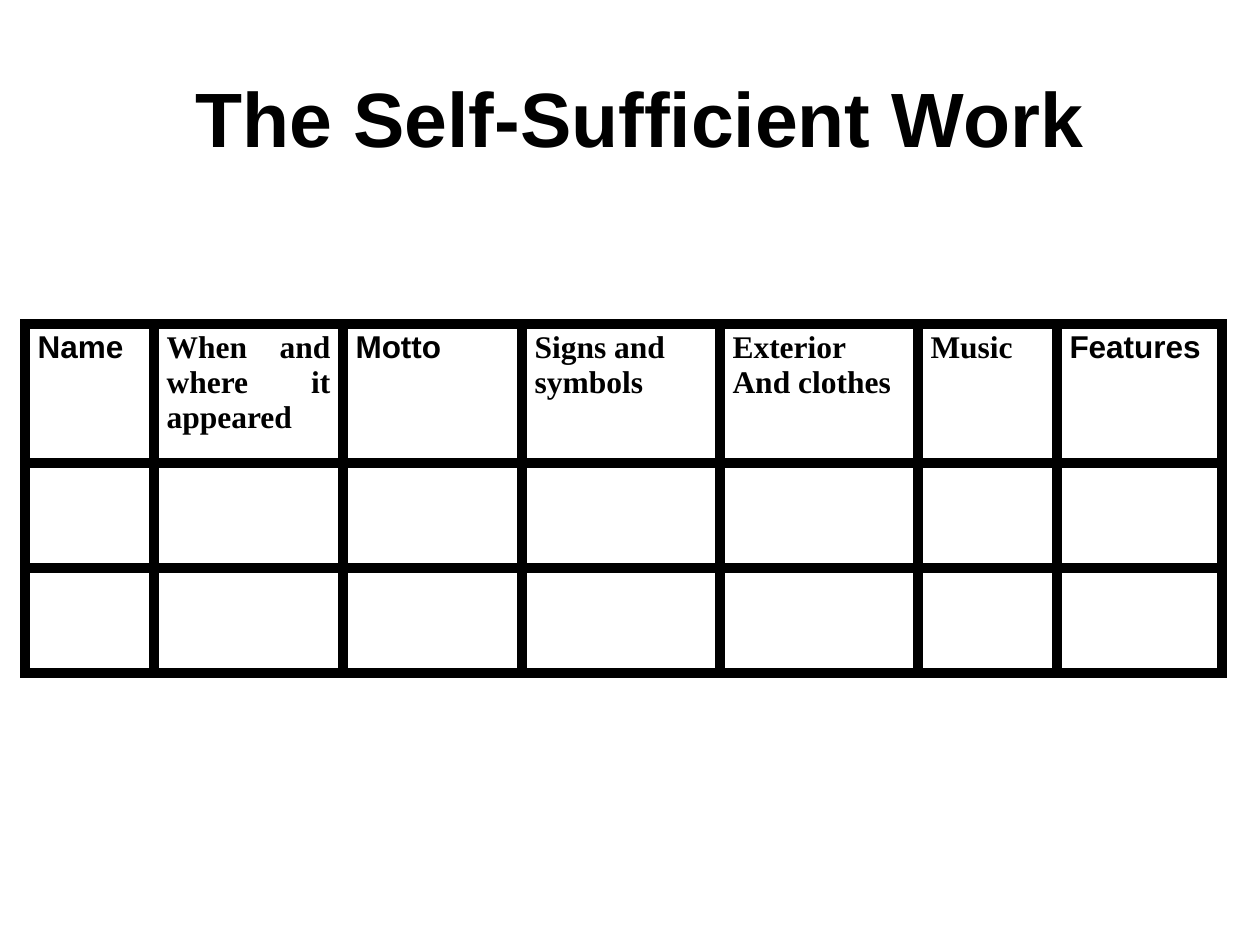
from dataclasses import dataclass

from lxml import etree
from pptx import Presentation
from pptx.dml.color import RGBColor
from pptx.enum.text import MSO_ANCHOR, PP_ALIGN
from pptx.oxml.ns import qn
from pptx.util import Pt

PX = 914400 / 126
LEFT, CENTER, JUSTIFY = PP_ALIGN.LEFT, PP_ALIGN.CENTER, PP_ALIGN.JUSTIFY
MIDDLE = MSO_ANCHOR.MIDDLE
SANS, SERIF = "Arial", "Times New Roman"


@dataclass(frozen=True)
class Theme:
    ink: str = "000000"
    paper: str = "FFFFFF"
    title_size: int = 44
    header_size: int = 18
    border_width: int = 6


def px(length):
    return round(length * PX)


def write(frame, text, *, font, size, color, align=LEFT):
    """Fill a text frame, one paragraph for each line of text."""
    for index, line in enumerate(text.split("\n")):
        paragraph = frame.add_paragraph() if index else frame.paragraphs[0]
        paragraph.alignment = align
        run = paragraph.add_run()
        run.text = line
        run.font.name = font
        run.font.size = Pt(size)
        run.font.bold = True
        run.font.color.rgb = RGBColor.from_string(color)


def border_cell(cell, width, color):
    properties = cell._tc.get_or_add_tcPr()
    for position, side in enumerate(("lnL", "lnR", "lnT", "lnB")):
        line = etree.Element(qn(f"a:{side}"), w=str(Pt(width)))
        fill = etree.SubElement(line, qn("a:solidFill"))
        etree.SubElement(fill, qn("a:srgbClr"), val=color)
        properties.insert(position, line)


class SlideBuilder:
    def __init__(self, slide, theme):
        self.slide = slide
        self.theme = theme

    def title(self, text, left, top, width, height):
        title = self.slide.shapes.title
        title.left, title.top = px(left), px(top)
        title.width, title.height = px(width), px(height)
        title.fill.solid()
        title.fill.fore_color.rgb = RGBColor.from_string(self.theme.paper)
        title.text_frame.vertical_anchor = MIDDLE
        write(title.text_frame, text, font=SANS, size=self.theme.title_size,
              color=self.theme.ink, align=CENTER)

    def worksheet(self, headers, left, top, widths, heights):
        """Add a bordered table with a header row above blank rows to fill in."""
        table = self.slide.shapes.add_table(
            len(heights), len(widths), px(left), px(top),
            px(sum(widths)), px(sum(heights))).table
        table.first_row = table.horz_banding = False
        for column, width in zip(table.columns, widths):
            column.width = px(width)
        for row, height in zip(table.rows, heights):
            row.height = px(height)
        for cell in table.iter_cells():
            cell.fill.background()
            border_cell(cell, self.theme.border_width, self.theme.ink)
        for column, (text, font, align) in enumerate(headers):
            write(table.cell(0, column).text_frame, text, font=font, align=align,
                  size=self.theme.header_size, color=self.theme.ink)


def main():
    presentation = Presentation()
    presentation.slide_width, presentation.slide_height = px(1260), px(945)
    title_only = presentation.slide_layouts[5]
    builder = SlideBuilder(presentation.slides.add_slide(title_only), Theme())

    builder.title("The Self-Sufficient Work", 174, 38, 932, 158)
    headers = [
        ("Name", SANS, LEFT),
        ("When and where it appeared", SERIF, JUSTIFY),
        ("Motto", SANS, JUSTIFY),
        ("Signs and\nsymbols", SERIF, JUSTIFY),
        ("Exterior\nAnd clothes", SERIF, JUSTIFY),
        ("Music", SERIF, JUSTIFY),
        ("Features", SANS, JUSTIFY),
    ]
    builder.worksheet(headers, 25, 324,
                      widths=[129, 189, 179, 198, 198, 139, 165],
                      heights=[139, 105, 105])
    presentation.save("out.pptx")


if __name__ == "__main__":
    main()
